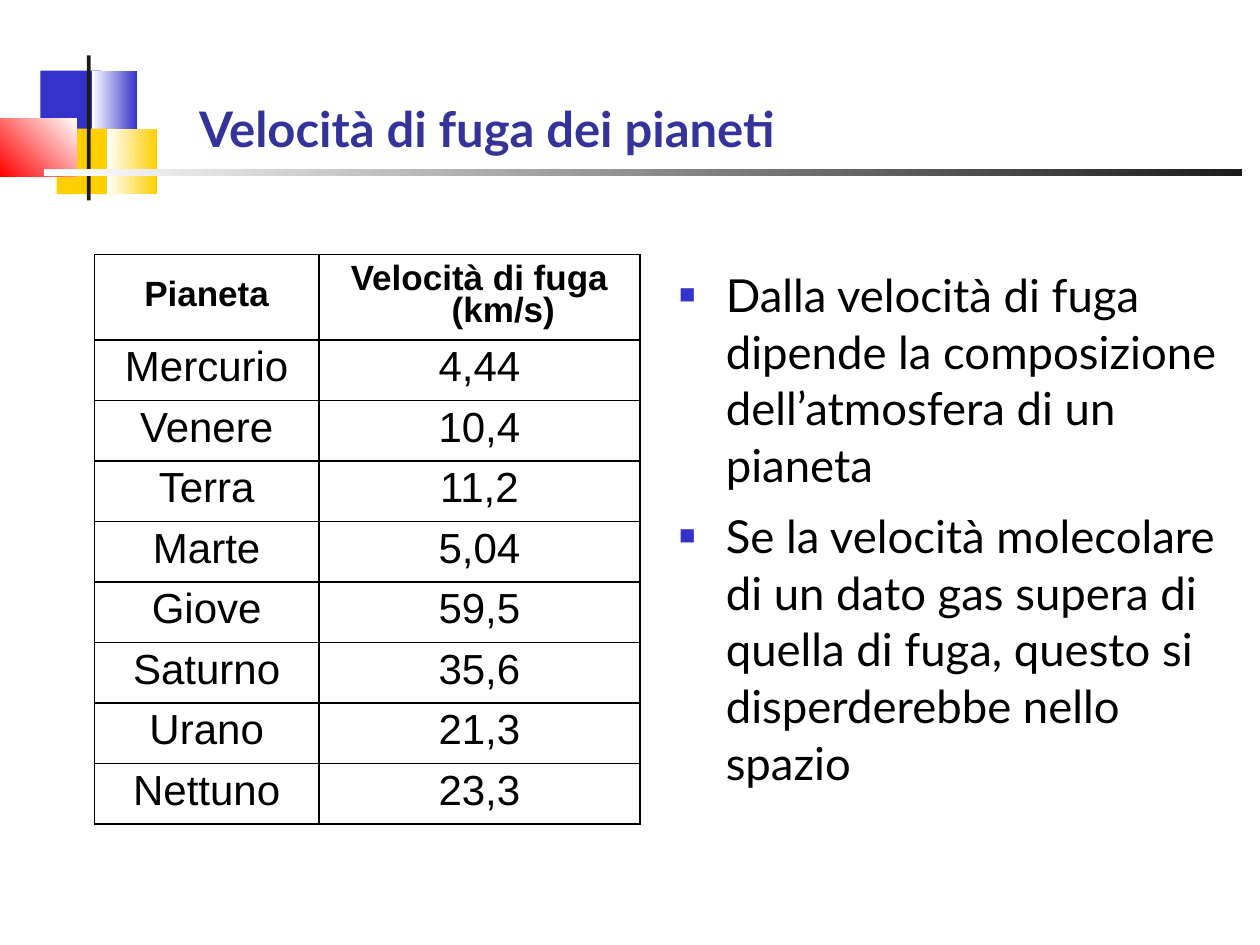
from lxml.etree import SubElement
from pptx import Presentation
from pptx.dml.color import RGBColor
from pptx.enum.shapes import MSO_SHAPE
from pptx.enum.text import MSO_ANCHOR as Anchor, MSO_AUTO_SIZE as AutoSize, PP_ALIGN as Align
from pptx.oxml.ns import qn
from pptx.util import Inches, Pt

# Content
TITLE = "Velocità di fuga dei pianeti"
PLANETS = [
    ("Pianeta", "Velocità di fuga\v(km/s)"),
    ("Mercurio", "4,44"),
    ("Venere", "10,4"),
    ("Terra", "11,2"),
    ("Marte", "5,04"),
    ("Giove", "59,5"),
    ("Saturno", "35,6"),
    ("Urano", "21,3"),
    ("Nettuno", "23,3"),
]
POINTS = [
    "Dalla velocità di fuga dipende la composizione dell’atmosfera di un pianeta",
    "Se la velocità molecolare di un dato gas supera di quella di fuga, "
    "questo si disperderebbe nello spazio",
]
THEME = {
    "heading_font": "Lato", "table_font": "Arial",
    "title": "333399", "text": "000000", "blue": "3333CC", "yellow": "FFCF01",
    "red": "FF0000", "white": "FFFFFF", "dark": "1C1C1C",
    "title_size": 28, "body_size": 26, "header_size": 20, "cell_size": 24,
}
# Box, fill colours (two make a gradient), clockwise gradient angle
ORNAMENTS = [
    ((0.32, 0.56, 0.48, 0.52), ["blue"], 0),
    ((0.73, 0.56, 0.36, 0.52), ["blue", "white"], 180),
    ((0.45, 1.02, 0.46, 0.52), ["yellow"], 0),
    ((0.85, 1.02, 0.40, 0.52), ["yellow", "white"], 180),
    ((0, 0.94, 0.61, 0.46), ["white", "red"], 135),
    ((0.69, 0.44, 0.03, 1.15), ["dark"], 0),
    ((0.35, 1.34, 9.51, 0.06), ["dark", "white"], 180),
]
COLUMN_WIDTHS = (1.78, 2.55)
HEADER_HEIGHT, ROW_HEIGHT = 0.68, 0.48


def color(name):
    return RGBColor.from_string(THEME[name])


def write(paragraph, text, *, size, font, ink="text", bold=False,
          align=Align.LEFT, spacing=1.04, before=0, hanging=0, bullet=None):
    paragraph.text = text
    props = paragraph._p.get_or_add_pPr()
    props.set("marL", str(Inches(hanging)))
    props.set("indent", str(-Inches(hanging)))
    if bullet:
        tint = SubElement(props, qn("a:buClr"))
        SubElement(tint, qn("a:srgbClr"), val=THEME["blue"])
        SubElement(props, qn("a:buSzPct"), val="60000")
        SubElement(props, qn("a:buChar"), char=bullet)
    paragraph.alignment = align
    paragraph.line_spacing = spacing
    paragraph.space_before = Pt(before)
    for run in paragraph.runs:
        run.font.name, run.font.size, run.font.bold = font, Pt(THEME[size]), bold
        run.font.color.rgb = color(ink)


def place(placeholder, box, anchor, margins):
    placeholder.left, placeholder.top, placeholder.width, placeholder.height = map(Inches, box)
    frame = placeholder.text_frame
    frame.word_wrap, frame.auto_size, frame.vertical_anchor = True, AutoSize.NONE, anchor
    frame.margin_left = frame.margin_right = Inches(margins[0])
    frame.margin_top = frame.margin_bottom = Inches(margins[1])
    return frame


def outline(cell):
    props = cell._tc.get_or_add_tcPr()
    for side in ("lnL", "lnR", "lnT", "lnB"):
        border = SubElement(props, qn(f"a:{side}"), w=str(Pt(1)))
        fill = SubElement(border, qn("a:solidFill"))
        SubElement(fill, qn("a:srgbClr"), val=THEME["text"])


def main():
    deck = Presentation()
    deck.slide_width, deck.slide_height = Inches(10), Inches(7.5)
    slide = deck.slides.add_slide(deck.slide_layouts[1])

    # Corner ornament and rule
    for box, fills, angle in ORNAMENTS:
        block = slide.shapes.add_shape(MSO_SHAPE.RECTANGLE, *map(Inches, box))
        block.shadow.inherit = False
        block.line.fill.background()
        if len(fills) == 1:
            block.fill.solid()
            block.fill.fore_color.rgb = color(fills[0])
        else:
            block.fill.gradient()
            block.fill.gradient_angle = 360 - angle
            for stop, name in zip(block.fill.gradient_stops, fills):
                stop.color.rgb = color(name)

    # Title
    heading = place(slide.shapes.title, (1.48, 0.24, 8.52, 1.06), Anchor.BOTTOM, (0.1, 0.05))
    write(heading.paragraphs[0], TITLE, size="title_size", font=THEME["heading_font"],
          ink="title", bold=True)

    # Escape velocity table
    heights = [HEADER_HEIGHT] + [ROW_HEIGHT] * (len(PLANETS) - 1)
    table = slide.shapes.add_table(
        len(PLANETS), len(COLUMN_WIDTHS), Inches(0.75), Inches(2.02),
        Inches(sum(COLUMN_WIDTHS)), Inches(sum(heights))).table
    table.first_row = table.horz_banding = False
    for column, width in zip(table.columns, COLUMN_WIDTHS):
        column.width = Inches(width)
    for r, (planet, height) in enumerate(zip(PLANETS, heights)):
        table.rows[r].height = Inches(height)
        for c, value in enumerate(planet):
            cell = table.cell(r, c)
            outline(cell)
            cell.fill.background()
            cell.vertical_anchor = Anchor.MIDDLE
            write(cell.text_frame.paragraphs[0], value,
                  size="cell_size" if r else "header_size", font=THEME["table_font"],
                  bold=r == 0, align=Align.CENTER, spacing=0.82, hanging=0.38)

    # Bulleted points
    body = place(slide.placeholders[1], (5.39, 2.1, 4.34, 4.41), Anchor.TOP, (0, 0))
    for i, point in enumerate(POINTS):
        paragraph = body.add_paragraph() if i else body.paragraphs[0]
        write(paragraph, point, size="body_size", font=THEME["heading_font"],
              before=8 if i else 0, hanging=0.37, bullet="■")

    deck.save("out.pptx")


if __name__ == "__main__":
    main()
